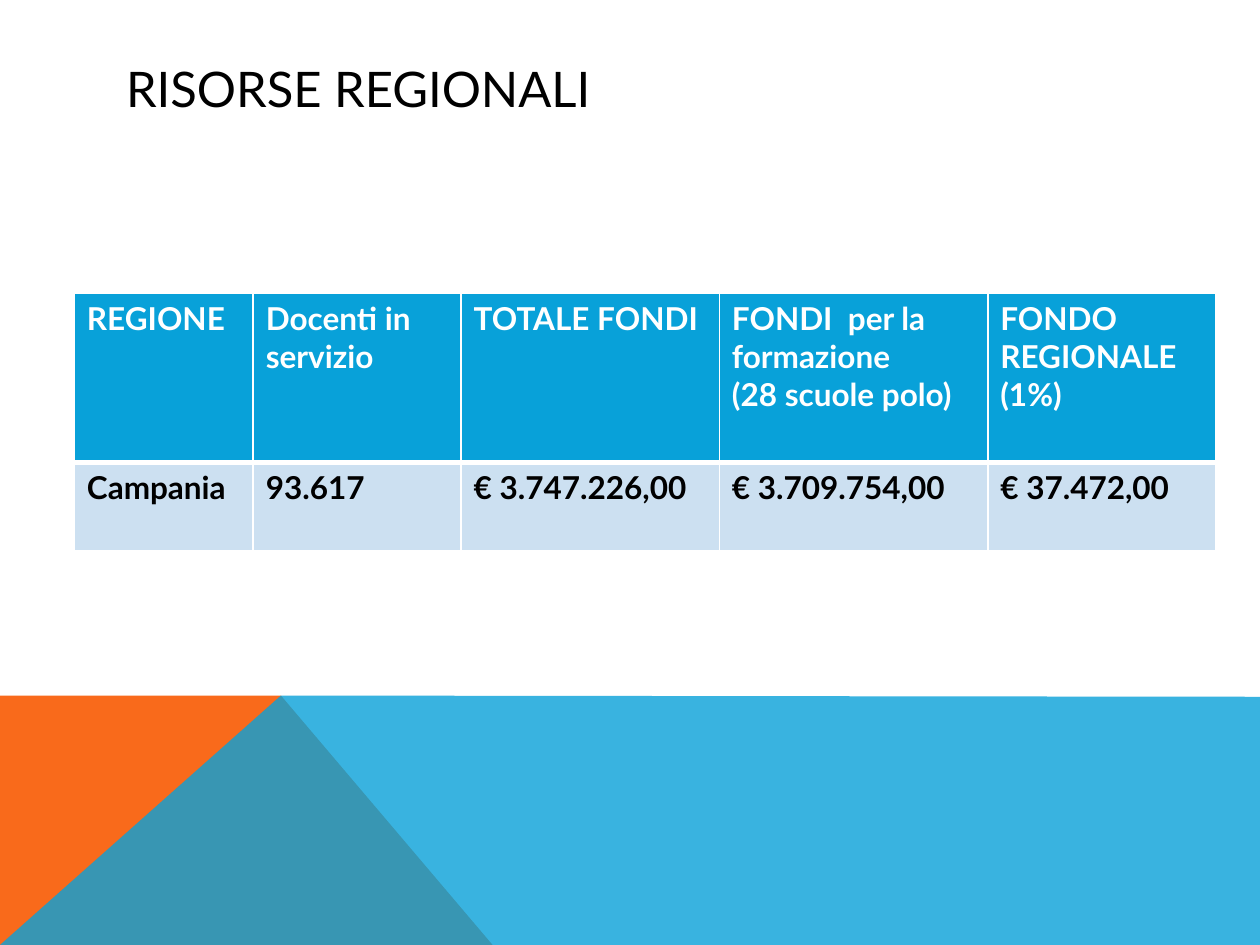
"""Build the slide on regional training resources."""
from dataclasses import dataclass

from lxml import etree
from pptx import Presentation
from pptx.dml.color import RGBColor
from pptx.enum import text
from pptx.oxml.ns import qn
from pptx.util import Inches, Pt


@dataclass(frozen=True)
class Theme:
    font: str = "Lato"
    title_size: int = 28
    table_size: int = 18
    black: str = "000000"
    white: str = "FFFFFF"
    blue: str = "08A1D9"
    pale: str = "CCE0F1"
    orange: str = "F96A1B"


@dataclass(frozen=True)
class Band:
    points: tuple[tuple[float, float], ...]
    color: str
    opacity: int = 100


@dataclass(frozen=True)
class Row:
    height: float
    cells: tuple[str, ...]
    fill: str
    color: str
    top: int
    bottom: int


THEME = Theme()
BANDS = (
    Band(((0, 7.5), (0, 5.52), (2.23, 5.52), (3.91, 7.5)), THEME.orange),
    Band(((0, 7.5), (2.23, 5.52), (10, 5.53), (10, 7.5)), THEME.blue, 80),
)
COLUMNS = (1.42, 1.65, 2.05, 2.13, 1.81)
ROWS = (
    Row(1.34, ("REGIONE", "Docenti in servizio", "TOTALE FONDI",
               "FONDI  per la formazione\n(28 scuole polo)", "FONDO REGIONALE (1%)"),
        THEME.blue, THEME.white, 1, 3),
    Row(0.7, ("Campania", "93.617", "€ 3.747.226,00", "€ 3.709.754,00", "€ 37.472,00"),
        THEME.pale, THEME.black, 3, 1),
)


def write(tf, content: str, *, size: int, color: str, bold: bool = False) -> None:
    """Fill a text frame with one paragraph per line."""
    for i, line in enumerate(content.split("\n")):
        p = tf.add_paragraph() if i else tf.paragraphs[0]
        p.alignment = text.PP_ALIGN.LEFT
        r = p.add_run()
        r.text = line
        r.font.name = THEME.font
        r.font.size = Pt(size)
        r.font.bold = bold
        r.font.color.rgb = RGBColor.from_string(color)


def draw_band(s, band: Band) -> None:
    """Draw one filled polygon of the footer."""
    points = [(Inches(x), Inches(y)) for x, y in band.points]
    builder = s.shapes.build_freeform(*points[0])
    builder.add_line_segments(points[1:], close=True)
    sp = builder.convert_to_shape()
    sp.shadow.inherit = False
    sp.line.fill.background()
    sp.fill.solid()
    sp.fill.fore_color.rgb = RGBColor.from_string(band.color)
    if band.opacity < 100:
        color = sp.fill._xPr.find(f".//{qn('a:srgbClr')}")
        etree.SubElement(color, qn("a:alpha"), val=str(band.opacity * 1000))


def set_borders(cell, color: str, **widths: int) -> None:
    """Set cell borders, with widths in points keyed by side L, R, T and B."""
    tc_pr = cell._tc.get_or_add_tcPr()
    for i, (side, width) in enumerate(widths.items()):
        ln = etree.Element(qn(f"a:ln{side}"), w=str(Pt(width)))
        fill = etree.SubElement(ln, qn("a:solidFill"))
        etree.SubElement(fill, qn("a:srgbClr"), val=color)
        tc_pr.insert(i, ln)


def draw_table(s, left: float, top: float, rows: tuple[Row, ...]) -> None:
    """Draw the table of funds."""
    width, height = sum(COLUMNS), sum(row.height for row in rows)
    table = s.shapes.add_table(len(rows), len(COLUMNS), Inches(left), Inches(top),
                               Inches(width), Inches(height)).table
    for column, w in zip(table.columns, COLUMNS):
        column.width = Inches(w)
    for i, row in enumerate(rows):
        table.rows[i].height = Inches(row.height)
        for j, content in enumerate(row.cells):
            cell = table.cell(i, j)
            cell.fill.solid()
            cell.fill.fore_color.rgb = RGBColor.from_string(row.fill)
            set_borders(cell, THEME.white, L=1, R=1, T=row.top, B=row.bottom)
            write(cell.text_frame, content, size=THEME.table_size, color=row.color, bold=True)


def draw_title(s, content: str) -> None:
    """Place and fill the title placeholder."""
    sp = s.shapes.title
    sp.left, sp.top, sp.width, sp.height = map(Inches, (0.9, 0.4, 8.22, 0.6))
    tf = sp.text_frame
    tf.word_wrap = True
    tf.auto_size = text.MSO_AUTO_SIZE.NONE
    tf.vertical_anchor = text.MSO_ANCHOR.MIDDLE
    write(tf, content, size=THEME.title_size, color=THEME.black)


def main() -> None:
    """Build and save the presentation."""
    prs = Presentation()
    prs.slide_width, prs.slide_height = Inches(10), Inches(7.5)
    s = prs.slides.add_slide(prs.slide_layouts[5])
    for band in BANDS:
        draw_band(s, band)
    draw_title(s, "RISORSE REGIONALI")
    draw_table(s, 0.59, 2.33, ROWS)
    prs.save("out.pptx")


if __name__ == "__main__":
    main()
